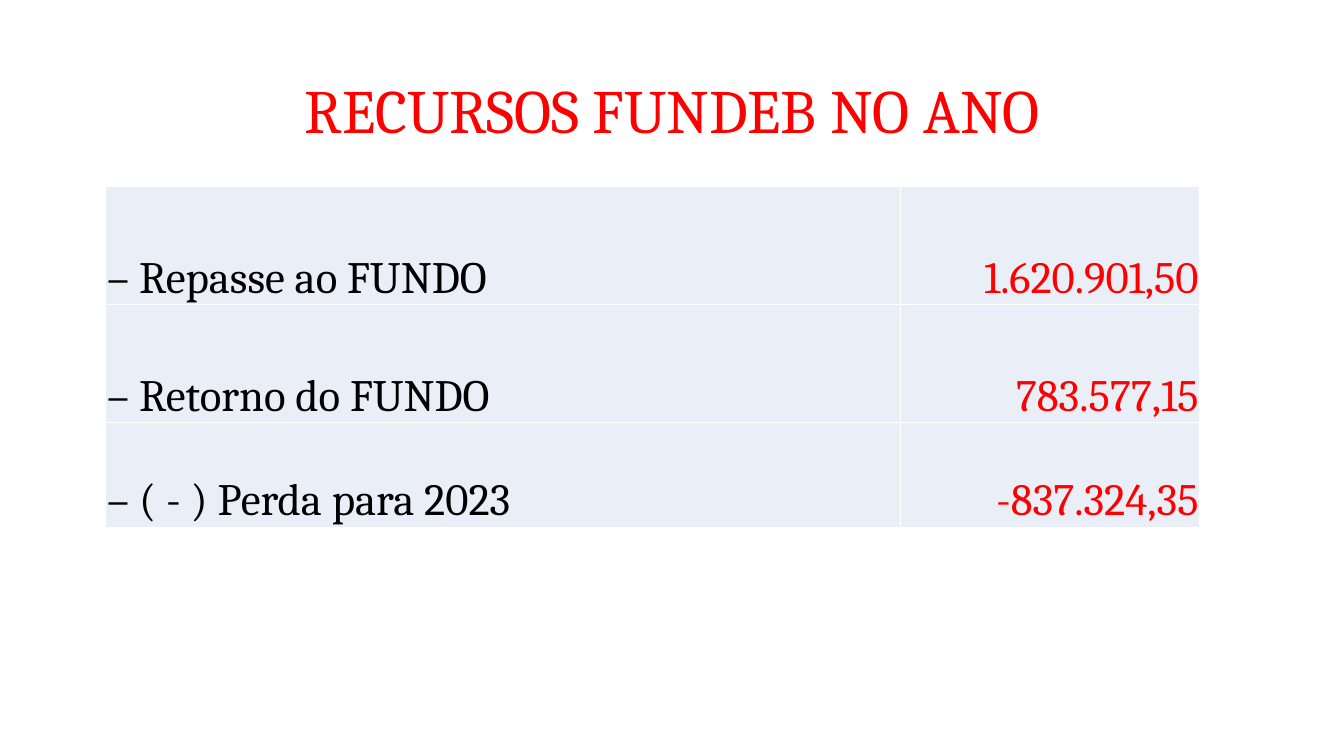
from pptx import Presentation
from pptx.dml.color import RGBColor
from pptx.enum.text import MSO_ANCHOR, PP_ALIGN
from pptx.util import Inches, Pt

LEFT, CENTER, RIGHT = PP_ALIGN.LEFT, PP_ALIGN.CENTER, PP_ALIGN.RIGHT
MIDDLE, BOTTOM = MSO_ANCHOR.MIDDLE, MSO_ANCHOR.BOTTOM
TITLE_ONLY = 5
FONT = "Cambria"
COLORS = {"label": "000000", "amount": "FF0000", "title": "FF0000",
          "cell": "EAEFF7"}

FUND_ROWS = [
    ("– Repasse ao FUNDO", "1.620.901,50"),
    ("– Retorno do FUNDO", "783.577,15"),
    ("– ( - ) Perda para 2023", "-837.324,35"),
]
COLUMN_WIDTHS = [7.88, 2.97]
ROW_HEIGHTS = [1.17, 1.17, 1.04]
COLUMN_STYLES = [("label", LEFT), ("amount", RIGHT)]


def write(para, text, size, color, align):
    para.alignment = align
    span = para.add_run()
    span.text = text
    span.font.name = FONT
    span.font.size = Pt(size)
    span.font.color.rgb = RGBColor.from_string(COLORS[color])


def add_title(page, left, top, width, height):
    title = page.shapes.title
    title.left, title.top = Inches(left), Inches(top)
    title.width, title.height = Inches(width), Inches(height)
    frame = title.text_frame
    frame.word_wrap = True
    frame.vertical_anchor = MIDDLE
    para = frame.paragraphs[0]
    para.line_spacing = 0.9
    write(para, "RECURSOS FUNDEB NO ANO", 44, "title", CENTER)


def add_fund_table(page, left, top):
    # The default table style supplies the thin white cell borders
    table = page.shapes.add_table(
        len(FUND_ROWS), len(COLUMN_WIDTHS), Inches(left), Inches(top),
        Inches(sum(COLUMN_WIDTHS)), Inches(sum(ROW_HEIGHTS))).table
    table.first_row = False
    table.horz_banding = False
    for column, width in zip(table.columns, COLUMN_WIDTHS):
        column.width = Inches(width)
    for row, height, values in zip(table.rows, ROW_HEIGHTS, FUND_ROWS):
        row.height = Inches(height)
        for cell, text, (color, align) in zip(row.cells, values, COLUMN_STYLES):
            cell.fill.solid()
            cell.fill.fore_color.rgb = RGBColor.from_string(COLORS["cell"])
            cell.margin_left = cell.margin_right = cell.margin_top = Inches(0.01)
            cell.margin_bottom = 0
            cell.vertical_anchor = BOTTOM
            write(cell.text_frame.paragraphs[0], text, 32, color, align)


def main():
    deck = Presentation()
    deck.slide_width, deck.slide_height = Inches(13.33), Inches(7.5)
    page = deck.slides.add_slide(deck.slide_layouts[TITLE_ONLY])
    add_title(page, 0.92, 0.4, 11.5, 1.45)
    add_fund_table(page, 1.05, 1.85)
    deck.save("out.pptx")


if __name__ == "__main__":
    main()
